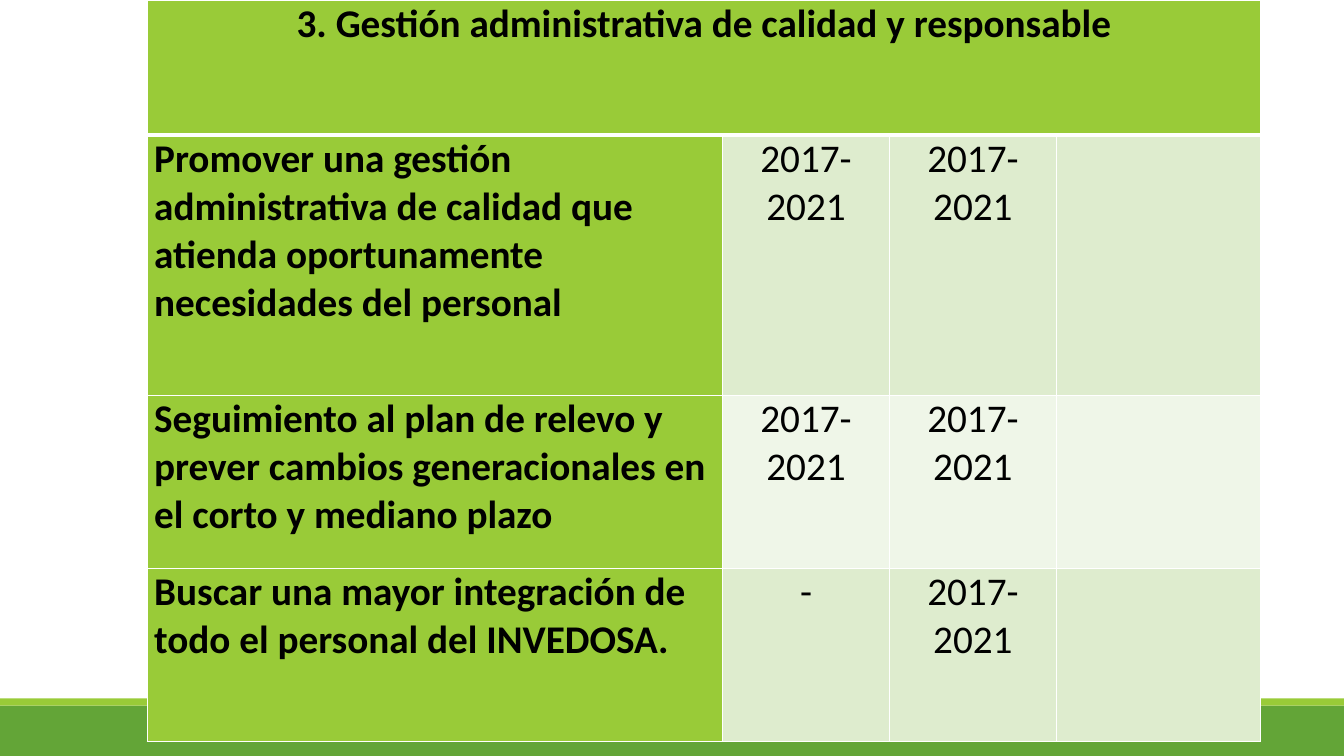
from lxml import etree
from pptx import Presentation
from pptx import util as u
from pptx.dml.color import RGBColor
from pptx.enum import shapes, text
from pptx.oxml.ns import qn

# Content
TITLE = "3. Gestión administrativa de calidad y responsable"
PERIOD = "2017-2021"
ACTIONS = [
    ("Promover una gestión administrativa de calidad que atienda "
     "oportunamente necesidades del personal", PERIOD, PERIOD, ""),
    ("Seguimiento al plan de relevo y prever cambios generacionales en "
     "el corto y mediano plazo", PERIOD, PERIOD, ""),
    ("Buscar una mayor integración de todo el personal del INVEDOSA.",
     "-", PERIOD, ""),
]

# Layout, in inches
PAGE_WIDTH, PAGE_HEIGHT = 13.33, 7.5
TABLE_LEFT, TABLE_TOP = 1.46, 0
COLUMN_WIDTHS = [5.71, 1.65, 1.66, 2.02]
ROW_HEIGHTS = [1.34, 2.58, 1.72, 1.72]
FOOTER_HEIGHT, STRIPE_HEIGHT = 0.5, 0.07
CELL_MARGIN = 0.07

THEME = {
    "font": "Calibri", "size": 28, "space_after": 6,
    "text": "000000", "border": "FFFFFF",
    "footer": "63A537", "accent": "99CB38",
    "bands": ["DEECCE", "EFF6E8"],
    "thin": 1, "thick": 3,
}


def add_band(page, top, height, color):
    band = page.shapes.add_shape(
        shapes.MSO_SHAPE.RECTANGLE, 0, u.Inches(top),
        u.Inches(PAGE_WIDTH), u.Inches(height))
    band.shadow.inherit = False
    band.fill.solid()
    band.fill.fore_color.rgb = RGBColor.from_string(color)
    band.line.fill.background()


def write(cell, words, *, bold=False, centered=False):
    para = cell.text_frame.paragraphs[0]
    para.alignment = text.PP_ALIGN.CENTER if centered else text.PP_ALIGN.LEFT
    para.space_after = u.Pt(THEME["space_after"])
    span = para.add_run()
    span.text = words
    span.font.name = THEME["font"]
    span.font.size = u.Pt(THEME["size"])
    span.font.bold = bold
    span.font.color.rgb = RGBColor.from_string(THEME["text"])


def style_cell(cell, color, *, top, bottom):
    cell.margin_left = cell.margin_right = u.Inches(CELL_MARGIN)
    cell.margin_top = cell.margin_bottom = 0
    properties = cell._tc.get_or_add_tcPr()
    widths = {"lnL": THEME["thin"], "lnR": THEME["thin"], "lnT": top, "lnB": bottom}
    for side, width in widths.items():
        line = etree.SubElement(properties, qn(f"a:{side}"), w=str(u.Pt(width)))
        fill = etree.SubElement(line, qn("a:solidFill"))
        etree.SubElement(fill, qn("a:srgbClr"), val=THEME["border"])
    cell.fill.solid()
    cell.fill.fore_color.rgb = RGBColor.from_string(color)


def add_plan_table(page):
    table = page.shapes.add_table(
        len(ROW_HEIGHTS), len(COLUMN_WIDTHS), u.Inches(TABLE_LEFT),
        u.Inches(TABLE_TOP), u.Inches(sum(COLUMN_WIDTHS)),
        u.Inches(sum(ROW_HEIGHTS))).table
    for column, width in zip(table.columns, COLUMN_WIDTHS):
        column.width = u.Inches(width)
    for row, height in zip(table.rows, ROW_HEIGHTS):
        row.height = u.Inches(height)

    # Heading across all columns
    for cell in table.rows[0].cells:
        style_cell(cell, THEME["accent"], top=THEME["thin"], bottom=THEME["thick"])
    heading = table.cell(0, 0)
    heading.merge(table.cell(0, len(COLUMN_WIDTHS) - 1))
    write(heading, TITLE, bold=True, centered=True)

    # Actions and their periods
    for r, action in enumerate(ACTIONS, start=1):
        band = THEME["bands"][(r - 1) % 2]
        for c, words in enumerate(action):
            cell = table.cell(r, c)
            style_cell(cell, band if c else THEME["accent"],
                       top=THEME["thick"] if r == 1 else THEME["thin"],
                       bottom=THEME["thin"])
            if words:
                write(cell, words, bold=c == 0, centered=c > 0)


def main():
    deck = Presentation()
    deck.slide_width = u.Inches(PAGE_WIDTH)
    deck.slide_height = u.Inches(PAGE_HEIGHT)
    page = deck.slides.add_slide(deck.slide_layouts[6])

    # Footer bands, then the table over them
    footer_top = PAGE_HEIGHT - FOOTER_HEIGHT
    add_band(page, footer_top, FOOTER_HEIGHT, THEME["footer"])
    add_band(page, footer_top - STRIPE_HEIGHT, STRIPE_HEIGHT, THEME["accent"])
    add_plan_table(page)
    deck.save("out.pptx")


if __name__ == "__main__":
    main()
